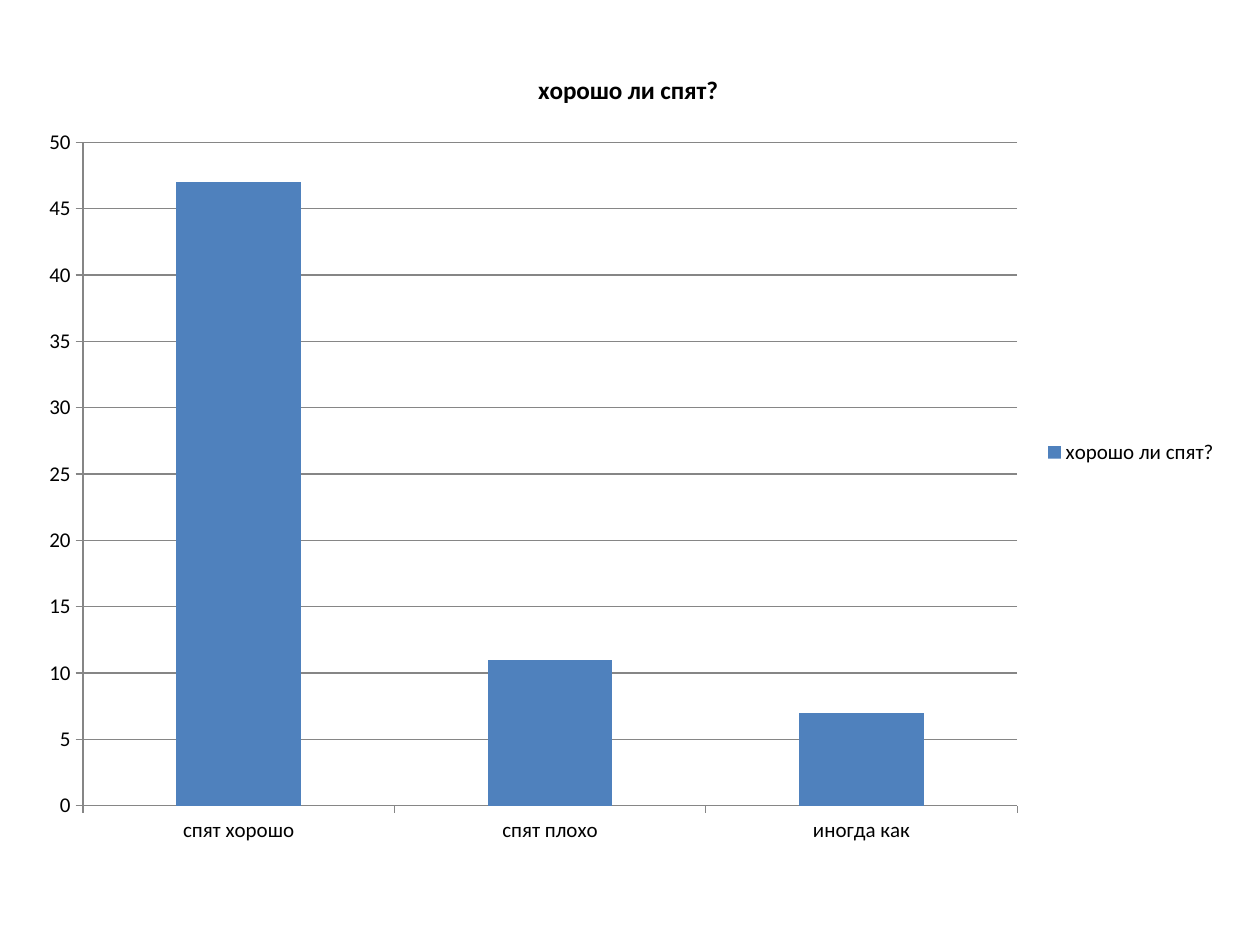
from pptx import Presentation
from pptx.chart.data import CategoryChartData
from pptx.dml.color import RGBColor
from pptx.enum.chart import XL_CHART_TYPE, XL_LEGEND_POSITION as LegendPos, XL_TICK_MARK as Tick
from pptx.util import Inches, Pt

# Content
QUESTION = "хорошо ли спят?"
ANSWERS = {"спят хорошо": 47, "спят плохо": 11, "иногда как": 7}

FONT = "Calibri"
BLACK = RGBColor(0x00, 0x00, 0x00)
BLUE = RGBColor(0x4F, 0x81, 0xBD)
GRAY = RGBColor(0x86, 0x86, 0x86)


def set_font(font, size, bold=False):
    font.name, font.size, font.bold = FONT, Pt(size), bold
    font.color.rgb = BLACK


prs = Presentation()
prs.slide_width, prs.slide_height = Inches(10), Inches(7.5)
s = prs.slides.add_slide(prs.slide_layouts[6])

# Column chart
data = CategoryChartData()
data.categories = list(ANSWERS)
data.add_series(QUESTION, list(ANSWERS.values()))
chart = s.shapes.add_chart(
    XL_CHART_TYPE.COLUMN_STACKED,
    Inches(0.2), Inches(0.36), Inches(9.57), Inches(6.46), data,
).chart
set_font(chart.font, 12)

# Title
chart.has_title = True
p = chart.chart_title.text_frame.paragraphs[0]
p.text = QUESTION
set_font(p.font, 14.4, bold=True)
chart.chart_title.include_in_layout = False

# Legend
chart.has_legend = True
chart.legend.position = LegendPos.RIGHT
chart.legend.include_in_layout = False

# Columns
plot = chart.plots[0]
plot.gap_width, plot.overlap = 150, 100
plot.vary_by_categories = False
fill = plot.series[0].format.fill
fill.solid()
fill.fore_color.rgb = BLUE

# Axes and gridlines
value_axis = chart.value_axis
value_axis.minimum_scale, value_axis.maximum_scale, value_axis.major_unit = 0, 50, 5
value_axis.has_major_gridlines = True
for axis in (chart.category_axis, value_axis):
    axis.major_tick_mark, axis.minor_tick_mark = Tick.OUTSIDE, Tick.NONE
for part in (chart.category_axis, value_axis, value_axis.major_gridlines):
    part.format.line.color.rgb = GRAY
    part.format.line.width = Pt(0.75)

prs.save("out.pptx")
